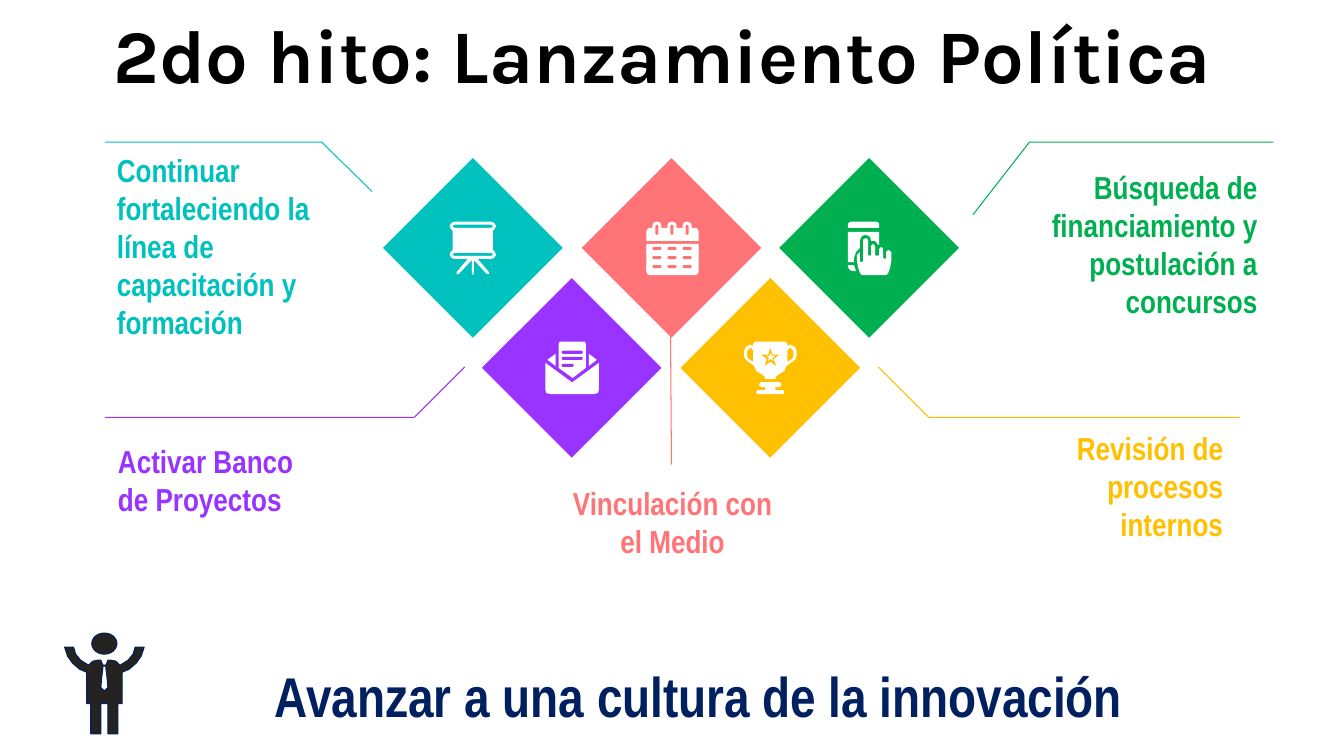
import dataclasses

import pptx
import pptx.dml.color
import pptx.enum.shapes
import pptx.enum.text
import pptx.oxml
import pptx.util

PX = 9144  # EMU per px, 100 px to the inch


@dataclasses.dataclass(frozen=True)
class Theme:
    teal: str = "00C1BE"
    violet: str = "9933FF"
    coral: str = "FF7477"
    amber: str = "FFC000"
    green: str = "00B050"
    white: str = "FFFFFF"
    black: str = "000000"
    navy: str = "002060"
    ink: str = "242321"
    heading: str = "Karla"
    body: str = "Arial Narrow"
    title_pt: float = 54
    label_pt: float = 22.7
    closing_pt: float = 40
    line_pt: float = 0.75


theme = Theme()
Preset = pptx.enum.shapes.MSO_SHAPE
Align = pptx.enum.text.PP_ALIGN
Anchor = pptx.enum.text.MSO_ANCHOR
rgb = pptx.dml.color.RGBColor.from_string
PILL, TAB, RECT = Preset.ROUNDED_RECTANGLE, Preset.ROUND_2_SAME_RECTANGLE, Preset.RECTANGLE
OUTLINE = "outline"

deck = pptx.Presentation()
deck.slide_width, deck.slide_height = 1333 * PX, 750 * PX
slide = deck.slides.add_slide(deck.slide_layouts[6])
shapes = slide.shapes


def draw(kind, geometry, fill=None, line=None, x=0, y=0):
    """Draw a preset from its box, or an outline from contours; (x, y) shifts either."""
    if kind == OUTLINE:
        builder = shapes.build_freeform(*geometry[0][0], scale=PX)
        for contour in geometry:
            builder.move_to(*contour[0])
            builder.add_line_segments(contour[1:], close=fill is not None)
        shape = builder.convert_to_shape(x * PX, y * PX)
    else:
        left, top, width, height = geometry
        shape = shapes.add_shape(kind, (x + left) * PX, (y + top) * PX, width * PX, height * PX)
        if kind in (PILL, TAB):
            shape.adjustments[0] = min(0.5, 4 / min(width, height))
    shape.shadow.inherit = False
    if fill:
        shape.fill.solid()
        shape.fill.fore_color.rgb = rgb(fill)
    else:
        shape.fill.background()
    if line:
        shape.line.color.rgb = rgb(line)
        shape.line.width = pptx.util.Pt(theme.line_pt)
    else:
        shape.line.fill.background()
    return shape


def mirrored(half, axis_doubled):
    """Close a left half into a whole outline, mirrored about axis_doubled / 2."""
    return half + [(axis_doubled - x, y) for x, y in reversed(half)]


# Icon parts: kind, geometry inside the diamond, colour
board_half = [(8, 0), (5, 1), (3, 4), (4, 7), (6, 9), (6, 28), (4, 30), (3, 33), (5, 36),
              (8, 37), (21, 37), (10, 50), (10, 52), (12, 52), (25, 38), (25, 51), (26, 53)]
board = [(OUTLINE, [mirrored(board_half, 52), mirrored([(8, 3), (6, 4), (6, 5), (8, 6)], 52),
                    mirrored([(8, 31), (6, 32), (6, 33), (8, 34)], 52)], theme.white)]
envelope = [
    (OUTLINE, [[(0, 21), (0, 48), (1, 51), (5, 52), (48, 52), (52, 51), (53, 48),
                (53, 21), (27, 40), (26, 40)]], theme.white),
    (OUTLINE, [[(43, 12), (43, 24), (51, 18)]], theme.white),
    (OUTLINE, [[(10, 12), (2, 18), (10, 24)]], theme.white),
    (OUTLINE, [[(14, 0), (39, 0), (40, 2), (40, 26), (27, 36), (13, 26), (13, 2)]], theme.white),
    (PILL, (16, 9, 21, 3), theme.violet),
    (PILL, (16, 15, 21, 3), theme.violet),
    (PILL, (16, 22, 12, 3), theme.violet),
]
calendar = [
    (TAB, (1, 6, 52, 13), theme.white),
    (PILL, (1, 26, 52, 27), theme.white),
    (RECT, (1, 22, 52, 10), theme.white),
]
for column in range(3):
    x = 7 + 15 * column
    calendar += [(PILL, (x, 0, 9, 10), theme.white), (PILL, (x + 3, 3, 3, 10), theme.coral)]
    calendar += [(PILL, (x, 25 + 9 * row, 9, 3), theme.coral) for row in range(3)]

cup_half = [(11, 0), (9, 2), (9, 4), (6, 3), (2, 5), (0, 9), (0, 14), (1, 17), (3, 19),
            (10, 24), (12, 29), (17, 32), (20, 34), (21, 37)]
handle = [(6, 6), (3, 9), (3, 14), (4, 17), (9, 20), (9, 9), (8, 7)]
trophy = [
    (OUTLINE, [mirrored(cup_half, 52), handle, [(52 - x, y) for x, y in handle]], theme.white),
    (Preset.STAR_5_POINT, (17, 6, 18, 18), theme.amber),
    (Preset.STAR_5_POINT, (22, 11, 9, 8), theme.white),
    (PILL, (15, 40, 22, 5), theme.white),
    (RECT, (21, 44, 10, 5), theme.white),
    (PILL, (12, 48, 28, 4), theme.white),
]
phone = [
    (TAB, (5, 0, 31, 6), theme.white),
    (OUTLINE, [[(5, 10), (5, 40), (11, 40), (11, 36), (13, 30), (17, 26), (17, 18), (19, 14),
                (23, 13), (27, 15), (28, 19), (32, 19), (35, 23), (36, 22), (36, 10)]],
     theme.white),
    (OUTLINE, [[(5, 43), (5, 45), (7, 48), (10, 49), (13, 49), (11, 43)]], theme.white),
    (OUTLINE, [[(23, 16), (20, 18), (20, 39), (19, 40), (18, 40), (17, 39), (17, 30), (14, 33),
                (14, 39), (15, 45), (17, 51), (19, 53), (43, 53), (45, 51), (47, 45), (48, 39),
                (48, 30), (45, 28), (43, 30), (43, 36), (42, 37), (40, 36), (40, 27), (38, 25),
                (36, 27), (36, 33), (34, 34), (32, 33), (32, 24), (30, 22), (28, 24), (28, 33),
                (26, 34), (25, 33), (25, 18)]], theme.white),
]

# Milestones from left to right: colour, icon, callout, label, label box, alignment
milestones = [
    (theme.teal, board, [(369, 190), (319, 141), (104, 141)],
     "Continuar fortaleciendo la línea de capacitación y formación",
     (103, 223, 253, 42), Align.LEFT),
    (theme.violet, envelope, [(461, 364), (411, 414), (104, 414)],
     "Activar Banco de Proyectos", (104, 455, 215, 42), Align.LEFT),
    (theme.coral, calendar, [(665, 327), (666, 461)],
     "Vinculación con el Medio", (542, 497, 250, 42), Align.CENTER),
    (theme.amber, trophy, [(871, 364), (921, 414), (1230, 414)],
     "Revisión de procesos internos", (1011, 461, 215, 42), Align.RIGHT),
    (theme.green, phone, [(965, 213), (1021, 141), (1263, 141)],
     "Búsqueda de financiamiento y postulación a concursos",
     (1018, 211, 242, 62), Align.RIGHT),
]
texts = [("2do hito: Lanzamiento Política", (94, 24, 1126, 70), Align.CENTER,
          theme.heading, theme.title_pt, theme.black)]

for index, (color, icon, callout, label, label_box, align) in enumerate(milestones):
    left, top = 406 + round(98.3 * index), 302 if index % 2 else 183
    draw(RECT, (left, top, 126, 126), color).rotation = 45
    if len(callout) == 2:
        stem = shapes.add_connector(pptx.enum.shapes.MSO_CONNECTOR.STRAIGHT,
                                    *(v * PX for point in callout for v in point))
        stem.line.color.rgb = rgb(color)
        stem.line.width = pptx.util.Pt(theme.line_pt)
        stem._element.spPr.append(pptx.oxml.parse_xml(
            '<a:effectLst xmlns:a="http://schemas.openxmlformats.org/drawingml/2006/main"/>'))
    else:
        draw(OUTLINE, [callout], line=color)
    for kind, geometry, fill in icon:
        draw(kind, geometry, fill, x=left + 37, y=top + 37)
    texts.append((label, label_box, align, theme.body, theme.label_pt, color))

texts.append(("Avanzar a una cultura de la innovación", (100, 651, 1186, 77), Align.CENTER,
              theme.body, theme.closing_pt, theme.navy))
for content, (left, top, width, height), align, font, size, color in texts:
    frame = shapes.add_textbox(left * PX, top * PX, width * PX, height * PX).text_frame
    frame.word_wrap = True
    if size != theme.closing_pt:
        frame.vertical_anchor = Anchor.MIDDLE
        frame.margin_left = frame.margin_right = frame.margin_top = frame.margin_bottom = 13 * PX
    paragraph = frame.paragraphs[0]
    paragraph.alignment = align
    if size == theme.title_pt:
        paragraph.line_spacing = 0.9
    run = paragraph.add_run()
    run.text = content
    run.font.name, run.font.size, run.font.bold = font, pptx.util.Pt(size), True
    run.font.color.rgb = rgb(color)

# Cheering figure
figure_half = [(102, 660), (100, 655), (97, 655), (92, 656), (88, 660), (80, 655), (75, 649),
               (73, 642), (64, 642), (67, 651), (72, 658), (79, 664), (86, 667), (86, 698),
               (90, 698), (90, 728), (100, 728), (100, 698)]
tie_half = [(102, 661), (102, 663), (101, 671), (100, 682), (103, 685)]
draw(OUTLINE, [mirrored(half, 207) for half in (figure_half, tie_half)], theme.ink, theme.navy)
draw(Preset.OVAL, (91, 628, 25, 21), theme.ink, theme.navy)

deck.save("out.pptx")
